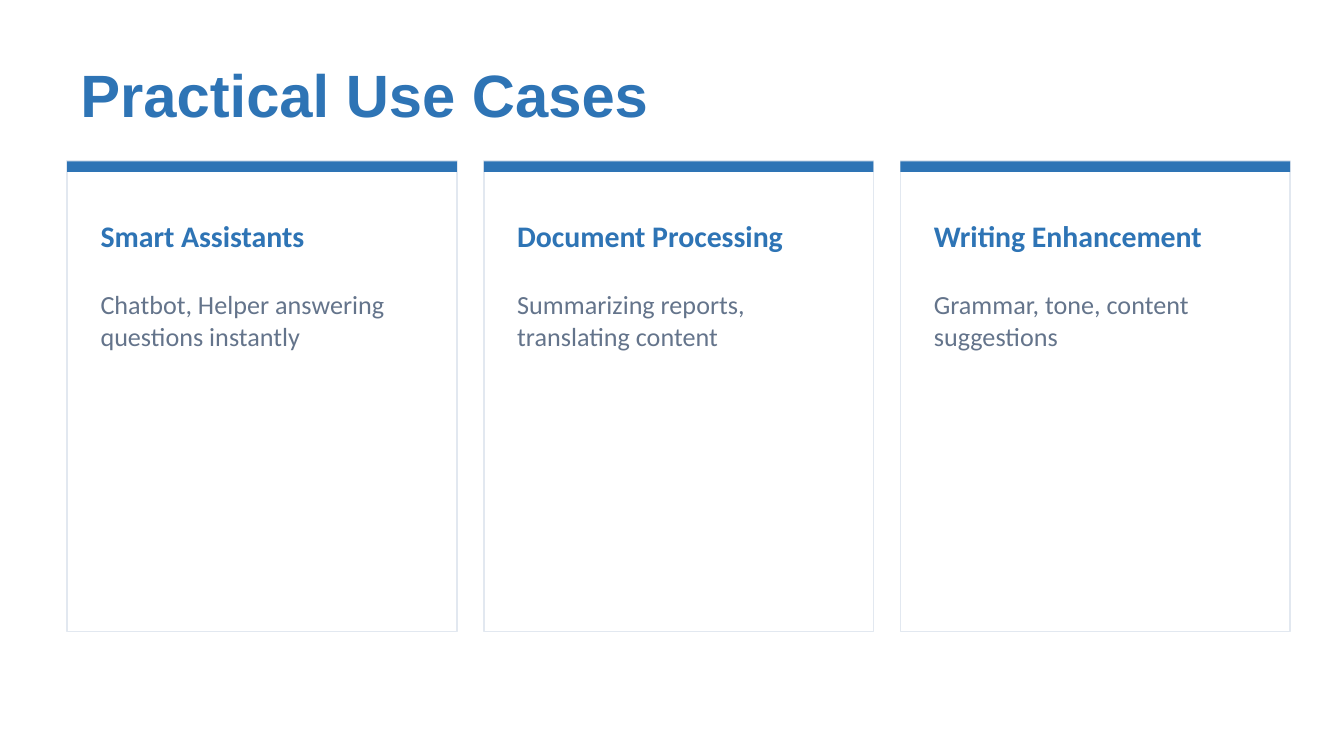
from pptx import Presentation
from pptx.dml.color import RGBColor
from pptx.enum.shapes import MSO_SHAPE
from pptx.enum.text import MSO_ANCHOR
from pptx.util import Pt

# Content
TITLE = "Practical Use Cases"
CARDS = [
    ("Smart Assistants", "Chatbot, Helper answering questions instantly"),
    ("Document Processing", "Summarizing reports, translating content"),
    ("Writing Enhancement", "Grammar, tone, content suggestions"),
]

# Style
COLORS = {"accent": "2E74B5", "body": "64748B", "border": "E2E8F0", "card": "FFFFFF"}
FORMATS = {
    "title": {"name": "Arial", "size": Pt(32), "bold": True},
    "heading": {"name": "Calibri", "size": Pt(16), "bold": True},
    "body": {"name": "Calibri", "size": Pt(14), "bold": False},
}

# Layout: 200 px to the inch
PX = 4572
SLIDE_W, SLIDE_H = 2000, 1125
LEFT, TOP = 100, 240
CARD_W, CARD_H, GAP = 580, 700, 40
BAR_H, PAD = 16, 30


def color(key):
    return RGBColor.from_string(COLORS[key])


def add_rect(s, box, fill, border=None):
    sp = s.shapes.add_shape(MSO_SHAPE.RECTANGLE, *(v * PX for v in box))
    sp.shadow.inherit = False
    sp.fill.solid()
    sp.fill.fore_color.rgb = color(fill)
    if border:
        sp.line.color.rgb = color(border)
        sp.line.width = Pt(1)
    else:
        sp.line.fill.background()


def add_text(s, box, text, style, ink, anchor=MSO_ANCHOR.MIDDLE):
    tf = s.shapes.add_textbox(*(v * PX for v in box)).text_frame
    tf.word_wrap = True
    tf.vertical_anchor = anchor
    r = tf.paragraphs[0].add_run()
    r.text = text
    for attr, value in FORMATS[style].items():
        setattr(r.font, attr, value)
    r.font.color.rgb = color(ink)


prs = Presentation()
prs.slide_width, prs.slide_height = SLIDE_W * PX, SLIDE_H * PX
s = prs.slides.add_slide(prs.slide_layouts[6])

# Title
add_text(s, (LEFT, 80, 1800, 120), TITLE, "title", "accent")

# Cards: frame, top bar, heading, description
for i, (heading, body) in enumerate(CARDS):
    x = LEFT + i * (CARD_W + GAP)
    text_x, text_w = x + PAD, CARD_W - 2 * PAD
    add_rect(s, (x, TOP, CARD_W, CARD_H), "card", "border")
    add_rect(s, (x, TOP, CARD_W, BAR_H), "accent")
    add_text(s, (text_x, TOP + 60, text_w, 100), heading, "heading", "accent")
    add_text(s, (text_x, TOP + 180, text_w, 480), body, "body", "body", MSO_ANCHOR.TOP)

prs.save("out.pptx")
